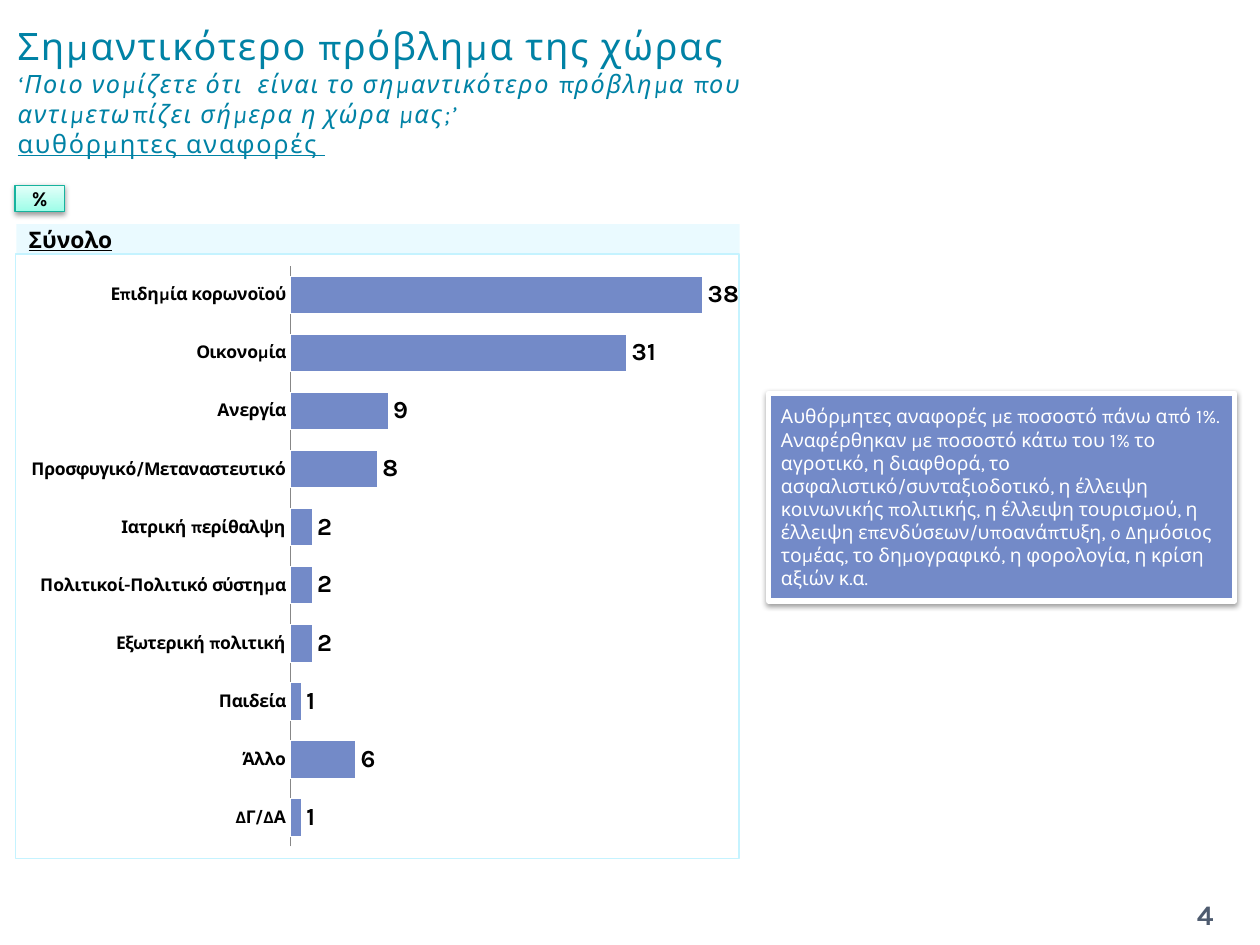
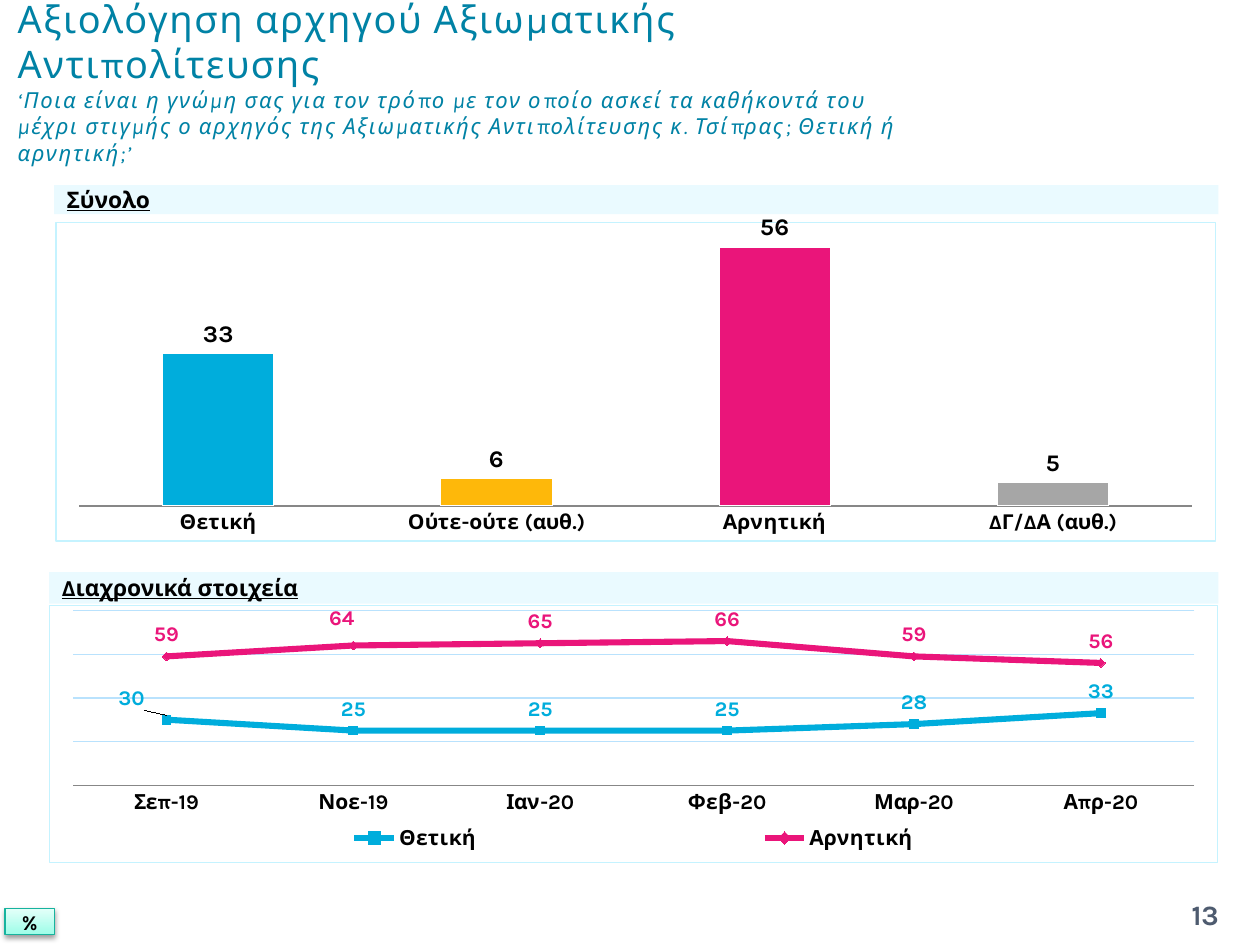
from lxml.etree import SubElement
from pptx import Presentation
from pptx.chart.data import CategoryChartData
from pptx.dml.color import RGBColor
from pptx.enum.chart import XL_CHART_TYPE, XL_LABEL_POSITION, XL_LEGEND_POSITION, XL_TICK_MARK
from pptx.enum.shapes import MSO_SHAPE
from pptx.enum.text import MSO_ANCHOR, MSO_AUTO_SIZE, PP_ALIGN
from pptx.oxml import parse_xml
from pptx.oxml.ns import nsdecls, qn
from pptx.util import Inches, Pt

FONT = "Karla"
HUES = {
    "title": "0082A5", "text": "000000", "page": "4E5B6F", "white": "FFFFFF",
    "band": "C5F3FF", "grid": "B9E2FD", "axis": "878787",
    "mint": "9DFDE8", "pale": "E4FFF9", "edge": "16B39E",
    "slate": "738AC8", "blue": "00ADDC", "pink": "EA157A", "gold": "FEB80A", "grey": "A6A6A6",
}
RGB = {name: RGBColor.from_string(hue) for name, hue in HUES.items()}


def write(shape, text, size, hue="text", bold=False, align=PP_ALIGN.LEFT):
    frame = shape.text_frame
    frame.text = text
    frame.word_wrap = True
    frame.auto_size = MSO_AUTO_SIZE.NONE
    frame.vertical_anchor = MSO_ANCHOR.MIDDLE
    for para in frame.paragraphs:
        para.alignment = align
        for run in para.runs:
            run.font.name, run.font.size, run.font.bold = FONT, Pt(size), bold
            run.font.color.rgb = RGB[hue]


def place(node, index, sizes, inner=False):
    """Give a chart part a manual layout; two sizes are offsets, four a full box."""
    for old in node.findall(qn("c:layout")):
        node.remove(old)
    layout = parse_xml(f"<c:layout {nsdecls('c')}><c:manualLayout/></c:layout>")
    parts = [("layoutTarget", "inner")] if inner else []
    if len(sizes) == 4:
        parts += [("xMode", "edge"), ("yMode", "edge")]
    for tag, val in parts + list(zip("xywh", sizes)):
        SubElement(layout[0], qn(f"c:{tag}")).set("val", str(val))
    node.insert(index, layout)


prs = Presentation()
prs.slide_width, prs.slide_height = Inches(10), Inches(7.5)

# Titles: box, then lines as (text, size, italic, underline)
titles = [
    ((0.04, 0.13, 6.85, 1.18), [
        ("Σημαντικότερο πρόβλημα της χώρας", 21.6, False, False),
        ("‘Ποιο νομίζετε ότι  είναι το σημαντικότερο πρόβλημα που αντιμετωπίζει σήμερα η χώρα μας;’",
         14.4, True, False),
        ("αυθόρμητες αναφορές ", 14.4, False, True)]),
    ((0.04, 0.05, 7.17, 1.18), [
        ("Αξιολόγηση αρχηγού Αξιωματικής Αντιπολίτευσης", 21.6, False, False),
        ("‘Ποια είναι η γνώμη σας για τον τρόπο με τον οποίο ασκεί τα καθήκοντά του μέχρι στιγμής "
         "ο αρχηγός της Αξιωματικής Αντιπολίτευσης κ. Τσίπρας; Θετική ή αρνητική;’",
         12.6, True, False)]),
]
slides = []
for box, lines in titles:
    slide = prs.slides.add_slide(prs.slide_layouts[5])
    slides.append(slide)
    title = slide.shapes.title
    title.left, title.top, title.width, title.height = map(Inches, box)
    write(title, "\v".join(line[0] for line in lines), 21.6, "title")
    for run, (_, size, slant, under) in zip(title.text_frame.paragraphs[0].runs, lines):
        run.font.size, run.font.italic, run.font.underline = Pt(size), slant, under
        run.font._element.set("spc", "100")
issues, leader = slides

# Charts
problems = {
    "Επιδημία κορωνοϊού": 38, "Οικονομία": 31, "Ανεργία": 9, "Προσφυγικό/Μεταναστευτικό": 8,
    "Ιατρική περίθαλψη": 2, "Πολιτικοί-Πολιτικό σύστημα": 2, "Εξωτερική πολιτική": 2,
    "Παιδεία": 1, "Άλλο": 6, "ΔΓ/ΔΑ": 1,
}
views = {"Θετική": 33, "Ούτε-ούτε (αυθ.)": 6, "Αρνητική": 56, "ΔΓ/ΔΑ (αυθ.)": 5}
months = ["Σεπ-19", "Νοε-19", "Ιαν-20", "Φεβ-20", "Μαρ-20", "Απρ-20"]
trend = {"Θετική": [30, 25, 25, 25, 28, 33], "Αρνητική": [59, 64, 65, 66, 59, 56]}
plans = [
    (issues, XL_CHART_TYPE.BAR_CLUSTERED, (0.12, 2.01, 5.75, 4.81), (0.38, 0.02, 0.6, 0.96),
     list(problems), {"Series 1": list(problems.values())}, 40, 10),
    (leader, XL_CHART_TYPE.COLUMN_CLUSTERED, (0.44, 1.7, 9.21, 2.6), (0.02, 0.02, 0.96, 0.87),
     list(views), {"Series 1": list(views.values())}, 60, 12),
    (leader, XL_CHART_TYPE.LINE, (0.39, 4.8, 9.28, 2.05), (0.02, 0.02, 0.96, 0.68),
     months, trend, 80, 12),
]
charts = []
for slide, kind, box, area, names, rows, top, size in plans:
    data = CategoryChartData(number_format="0")
    data.categories = names
    for name, vals in rows.items():
        data.add_series(name, vals)
    chart = slide.shapes.add_chart(kind, *map(Inches, box), data).chart
    charts.append(chart)
    chart.has_title = chart.has_legend = False
    chart.font.name, chart.font.size = FONT, Pt(18)
    chart.font.color.rgb = RGB["text"]
    chart.element.find(qn("c:txPr")).addprevious(parse_xml(
        f'<c:spPr {nsdecls("c", "a")}><a:noFill/><a:ln w="9525"><a:solidFill>'
        f'<a:srgbClr val="{HUES["band"]}"/></a:solidFill></a:ln></c:spPr>'))
    place(chart.element.xpath("//c:plotArea")[0], 0, area, inner=True)
    axis = chart.category_axis
    axis.major_tick_mark = XL_TICK_MARK.NONE
    axis.format.line.color.rgb = RGB["axis"]
    axis.tick_labels.font.size, axis.tick_labels.font.bold = Pt(size), True
    scale = chart.value_axis
    scale.visible = scale.has_major_gridlines = False
    scale.minimum_scale, scale.maximum_scale = 0, top
    chart.plots[0].vary_by_categories = False

bars, columns, lines = charts
bars.category_axis.reverse_order = True
for chart, gap, hue in [(bars, 54, "slate"), (columns, 150, "blue")]:
    plot = chart.plots[0]
    plot.gap_width, plot.overlap = gap, -25
    series = plot.series[0]
    series.format.fill.solid()
    series.format.fill.fore_color.rgb = RGB[hue]
    series.format.line.color.rgb = RGB["white"]
    labels = series.data_labels
    labels.show_value, labels.position = True, XL_LABEL_POSITION.OUTSIDE_END
    labels.font.size, labels.font.bold = Pt(14), True
for index, hue in enumerate(["gold", "pink", "grey"], 1):
    point = columns.plots[0].series[0].points[index].format
    point.fill.solid()
    point.fill.fore_color.rgb = RGB[hue]
    point.line.color.rgb = RGB["white"]

scale = lines.value_axis
scale.has_major_gridlines, scale.major_unit = True, 20
scale.major_gridlines.format.line.color.rgb = RGB["grid"]
scale.major_gridlines.format.line.width = Pt(0.75)
for series, hue, moved in zip(lines.plots[0].series, ["blue", "pink"], [0, 1]):
    series.smooth = False
    series.format.line.color.rgb, series.format.line.width = RGB[hue], Pt(3.5)
    series.marker.style = None
    labels, label = series.data_labels, series.points[moved].data_label
    labels.show_value = True
    for item in (labels, label):
        item.position = XL_LABEL_POSITION.ABOVE
        item.font.name, item.font.size, item.font.bold = FONT, Pt(12), True
        item.font.color.rgb = RGB[hue]
for label, shift in zip(lines.element.xpath("//c:dLbl"), [(-0.03, 0), (-0.01, -0.02)]):
    place(label, 1, shift)
lines.has_legend = True
legend = lines.legend
legend.position, legend.include_in_layout = XL_LEGEND_POSITION.BOTTOM, False
legend.font.size, legend.font.bold = Pt(12), True
place(lines.element.xpath("//c:legend")[0], 1, (0.02, 0.85, 0.96, 0.11))

# Heading bands; a tab extends the underline past the word
for slide, box, text in [
    (issues, (0.13, 1.78, 5.74, 0.24), "Σύνολο\t"),
    (leader, (0.43, 1.47, 9.24, 0.23), "Σύνολο\t"),
    (leader, (0.39, 4.54, 9.28, 0.25), "Διαχρονικά στοιχεία"),
]:
    band = slide.shapes.add_shape(MSO_SHAPE.RECTANGLE, *map(Inches, box))
    band.shadow.inherit = False
    band.fill.solid()
    band.fill.fore_color.rgb = RGB["band"]
    tint = band.fill._xPr.find(qn("a:solidFill"))[0]
    SubElement(tint, qn("a:alpha")).set("val", "35000")
    band.line.fill.background()
    write(band, text, 13, bold=True)
    para = band.text_frame.paragraphs[0]
    if "\t" in text:
        tabs = SubElement(para._p.get_or_add_pPr(), qn("a:tabLst"))
        stop = SubElement(tabs, qn("a:tab"))
        stop.set("pos", str(Inches(1.13)))
        stop.set("algn", "l")
    for run in para.runs:
        run.font.underline = True

# Percent badges and page numbers
raised = []
for slide, left, top, page in [(issues, 0.12, 1.47, "4"), (leader, 0.04, 7.21, "13")]:
    badge = slide.shapes.add_shape(
        MSO_SHAPE.RECTANGLE, Inches(left), Inches(top), Inches(0.39), Inches(0.21))
    badge.fill.gradient()
    badge.fill.gradient_angle = 90
    for stop, hue in zip(badge.fill.gradient_stops, ["mint", "pale"]):
        stop.color.rgb = RGB[hue]
    badge.line.color.rgb, badge.line.width = RGB["edge"], Pt(0.75)
    write(badge, "%", 12, bold=True, align=PP_ALIGN.CENTER)
    badge.text_frame.word_wrap = False
    raised.append(badge)
    number = slide.shapes.add_textbox(Inches(9.17), Inches(7.06), Inches(0.79), Inches(0.4))
    write(number, page, 16, "page", True, PP_ALIGN.CENTER)

# Note beside the bars
note = issues.shapes.add_shape(
    MSO_SHAPE.RECTANGLE, Inches(6.1), Inches(3.12), Inches(3.7), Inches(1.65))
note.fill.solid()
note.fill.fore_color.rgb = RGB["slate"]
note.line.color.rgb, note.line.width = RGB["white"], Pt(3)
write(note, "Αυθόρμητες αναφορές με ποσοστό πάνω από 1%.\n"
      "Αναφέρθηκαν με ποσοστό κάτω του 1% το αγροτικό, η διαφθορά, το "
      "ασφαλιστικό/συνταξιοδοτικό, η έλλειψη κοινωνικής πολιτικής, η έλλειψη τουρισμού, "
      "η έλλειψη επενδύσεων/υποανάπτυξη, o Δημόσιος τομέας, το δημογραφικό, "
      "η φορολογία, η κρίση αξιών κ.α.", 11, "white")
raised.append(note)

for shape in raised:
    shape.shadow.inherit = False
    glow = shape._element.spPr.find(qn("a:effectLst"))
    glow.append(parse_xml(
        f'<a:outerShdw {nsdecls("a")} blurRad="{Pt(3.1)}" dist="{Pt(1.6)}" dir="5400000" '
        f'rotWithShape="0"><a:srgbClr val="{HUES["text"]}"><a:alpha val="38000"/>'
        '</a:srgbClr></a:outerShdw>'))

prs.save("out.pptx")
